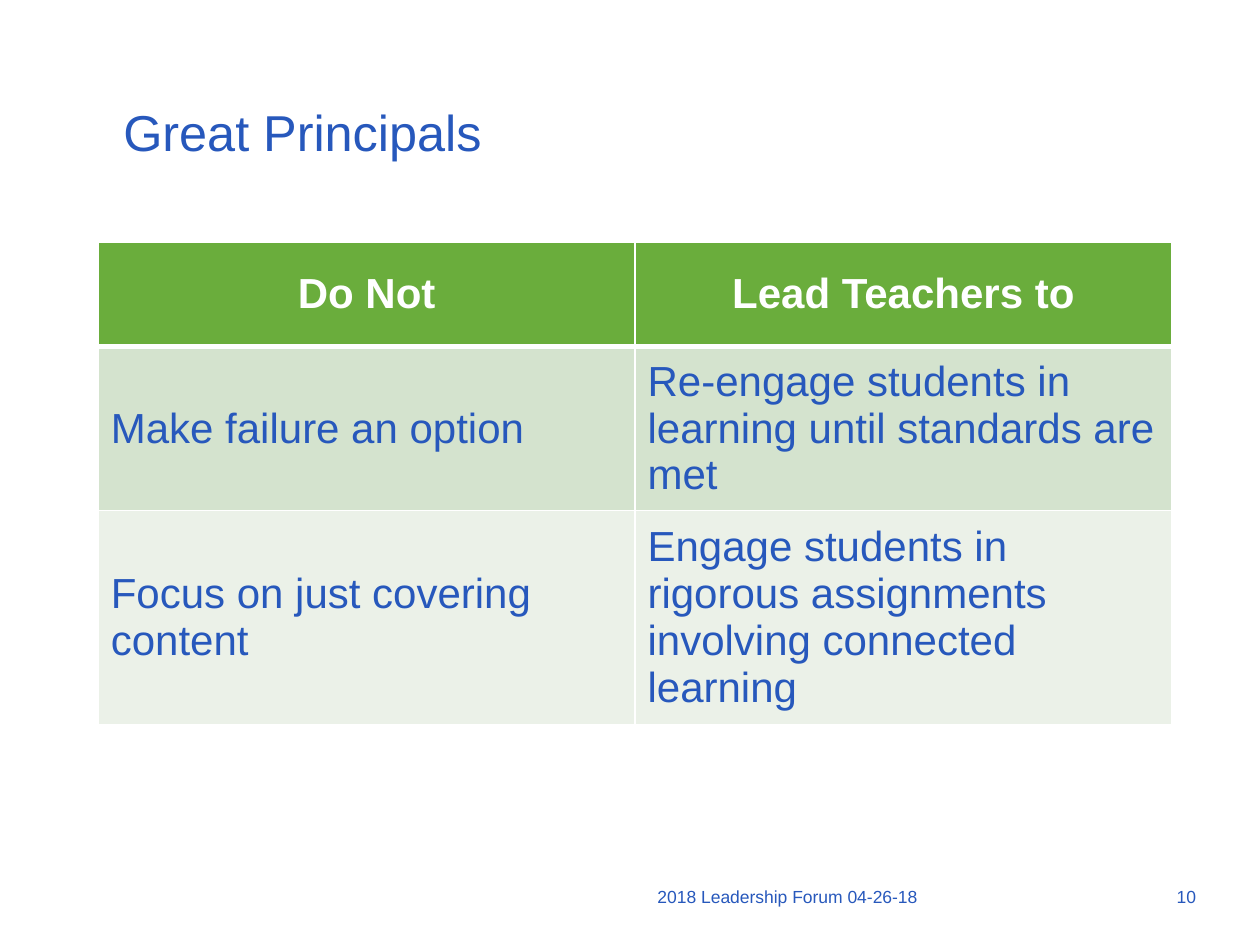
import pptx
import pptx.util
import pptx.oxml
import pptx.oxml.ns
import pptx.dml.color
import pptx.enum.text
from dataclasses import dataclass
from lxml import etree

Inches = pptx.util.Inches
Pt = pptx.util.Pt
Align = pptx.enum.text.PP_ALIGN
Anchor = pptx.enum.text.MSO_ANCHOR

COLORS = {
    "blue": "2758BC",
    "white": "FFFFFF",
    "green": "6AAD3C",
    "sage": "D4E3CE",
    "pale": "EBF1E8",
}
FONT = "Arial"


@dataclass
class Label:
    text: str
    left: float
    top: float
    width: float
    height: float
    size: float
    anchor: Anchor = Anchor.TOP


@dataclass
class Row:
    texts: tuple[str, str]
    height: float
    fill: str
    head: bool = False


LABELS = [
    Label("Great Principals", 0.88, 0.73, 8.41, 0.62, 28.8, Anchor.MIDDLE),
    Label("2018 Leadership Forum 04-26-18", 5.12, 6.98, 4.13, 0.45, 10),
    Label("10", 9.24, 6.98, 0.57, 0.45, 10),
]
ROWS = [
    Row(("Do Not", "Lead Teachers to"), 0.83, "green", True),
    Row(("Make failure an option",
         "Re-engage students in learning until standards are met"), 1.21, "sage"),
    Row(("Focus on just covering content",
         "Engage students in rigorous assignments involving connected learning"),
        1.58, "pale"),
]


def rgb(name: str) -> pptx.dml.color.RGBColor:
    return pptx.dml.color.RGBColor.from_string(COLORS[name])


def style(frame, size: float, color: str, bold: bool = False) -> None:
    for run in frame.paragraphs[0].runs:
        run.font.name = FONT
        run.font.size = Pt(size)
        run.font.bold = bold
        run.font.color.rgb = rgb(color)


def add_label(slide, label: Label) -> None:
    box = slide.shapes.add_textbox(Inches(label.left), Inches(label.top),
                                   Inches(label.width), Inches(label.height))
    frame = box.text_frame
    frame.word_wrap = True
    frame.vertical_anchor = label.anchor
    frame.text = label.text
    style(frame, label.size, "blue")


def add_edge(cell, side: str, width: float) -> None:
    """Draw one white border; side is L, R, T or B."""
    qn = pptx.oxml.ns.qn
    props = cell._tc.get_or_add_tcPr()
    line = etree.SubElement(props, qn(f"a:ln{side}"), w=str(Pt(width)))
    fill = etree.SubElement(line, qn("a:solidFill"))
    etree.SubElement(fill, qn("a:srgbClr"), val=COLORS["white"])


def fill_cell(cell, text: str, row: Row, edges: dict[str, float]) -> None:
    for side, width in edges.items():
        add_edge(cell, side, width)
    cell.fill.solid()
    cell.fill.fore_color.rgb = rgb(row.fill)
    cell.vertical_anchor = Anchor.MIDDLE
    frame = cell.text_frame
    frame.text = text
    frame.paragraphs[0].alignment = Align.CENTER if row.head else Align.LEFT
    style(frame, 24, "white" if row.head else "blue", row.head)


def add_grid(slide, rows: list[Row]) -> None:
    total = sum(row.height for row in rows)
    table = slide.shapes.add_table(len(rows), 2, Inches(0.78), Inches(1.92),
                                   Inches(8.52), Inches(total)).table
    for column in table.columns:
        column.width = Inches(4.26)
    above = 1
    for index, row in enumerate(rows):
        table.rows[index].height = Inches(row.height)
        below = 3 if row.head else 1
        edges = {"L": 1, "R": 1, "T": above, "B": below}
        for cell, text in zip(table.rows[index].cells, row.texts):
            fill_cell(cell, text, row, edges)
        above = below


def main() -> None:
    deck = pptx.Presentation()
    deck.slide_width = Inches(10)
    deck.slide_height = Inches(7.5)
    slide = deck.slides.add_slide(deck.slide_layouts[6])
    for label in LABELS:
        add_label(slide, label)
    add_grid(slide, ROWS)
    deck.save("out.pptx")


if __name__ == "__main__":
    main()
